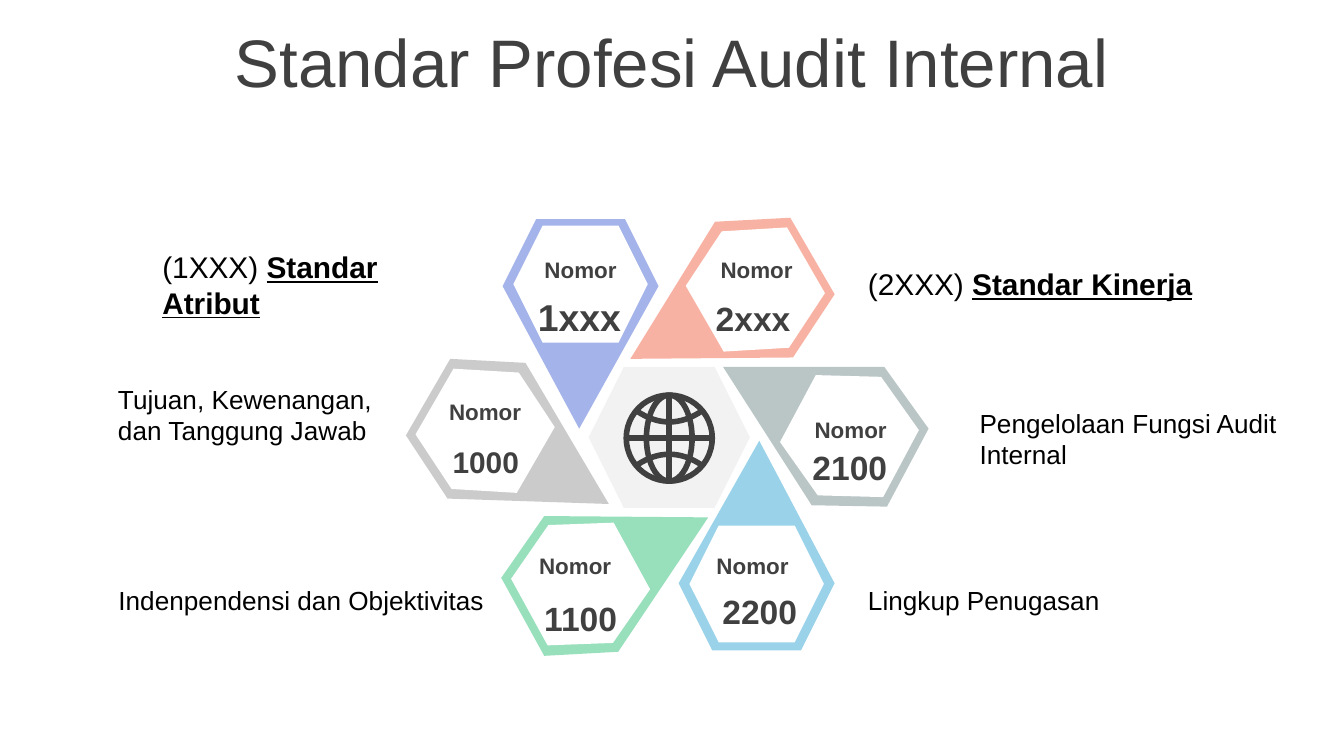
from lxml.etree import SubElement
from pptx import Presentation
from pptx.dml.color import RGBColor
from pptx.enum.shapes import MSO_CONNECTOR, MSO_SHAPE
from pptx.enum.text import MSO_ANCHOR, PP_ALIGN
from pptx.oxml.ns import qn
from pptx.util import Inches, Pt

FONT = "Arial"
DARK = RGBColor(0x40, 0x40, 0x40)
BLACK = RGBColor(0x00, 0x00, 0x00)
WHITE = RGBColor(0xFF, 0xFF, 0xFF)
PALE = RGBColor(0xF2, 0xF2, 0xF2)
BLUE = RGBColor(0xA4, 0xB4, 0xEA)
CORAL = RGBColor(0xF8, 0xB2, 0xA3)
SAGE = RGBColor(0xBA, 0xC5, 0xC5)
SKY = RGBColor(0x9A, 0xD3, 0xE9)
MINT = RGBColor(0x98, 0xDF, 0xBB)
GREY = RGBColor(0xCB, 0xCB, 0xCB)

# Petal outline, colour, inner hexagon (left, top, rotation),
# "Nomor" position, number, number box, number size
PETALS = [
    ([(3.99, 1.63), (4.65, 1.63), (4.9, 2.13), (4.31, 3.19), (3.74, 2.13)],
     BLUE, (3.82, 1.68, 0), (3.79, 1.86), "1xxx", (3.89, 2.14, 0.83, 0.44), 20),
    ([(5.88, 1.62), (6.21, 2.19), (5.9, 2.66), (4.69, 2.67), (5.32, 1.65)],
     CORAL, (5.12, 1.72, 60), (5.1, 1.86), "2xxx", (5.22, 2.17, 0.76, 0.4), 18),
    ([(6.91, 3.19), (6.6, 3.77), (6.04, 3.76), (5.38, 2.73), (6.58, 2.73)],
     SAGE, (5.82, 2.81, 118.1), (5.8, 3.05), "2100", (5.94, 3.28, 0.76, 0.4), 18),
    ([(5.96, 4.84), (5.3, 4.84), (5.05, 4.34), (5.65, 3.28), (6.21, 4.34)],
     SKY, (5.13, 3.91, 180), (5.07, 4.06), "2200", (5.27, 4.35, 0.76, 0.4), 18),
    ([(4.05, 4.88), (3.73, 4.3), (4.05, 3.84), (5.27, 3.85), (4.6, 4.85)],
     MINT, (3.82, 3.91, 241.3), (3.75, 4.06), "1100", (3.94, 4.4, 0.75, 0.4), 18),
    ([(3.02, 3.24), (3.35, 2.67), (3.91, 2.7), (4.53, 3.75), (3.33, 3.71)],
     GREY, (3.11, 2.77, 300), (3.08, 2.91), "1000", (3.26, 3.25, 0.7, 0.37), 16),
]

# Code, underlined name, box
HEADINGS = [
    ("(1XXX) ", "Standar Atribut", (1.11, 1.8, 2.53, 0.64)),
    ("(2XXX) ", "Standar Kinerja", (6.36, 1.93, 2.66, 0.37)),
]

DESCRIPTIONS = [
    ("Tujuan, Kewenangan, dan Tanggung Jawab", (0.78, 2.8, 2.2, 0.57), PP_ALIGN.LEFT),
    ("Indenpendensi dan Objektivitas", (0.59, 4.3, 3.11, 0.34), PP_ALIGN.RIGHT),
    ("Pengelolaan Fungsi Audit Internal", (7.19, 2.98, 2.46, 0.57), PP_ALIGN.LEFT),
    ("Lingkup Penugasan", (6.36, 4.3, 2.11, 0.34), PP_ALIGN.LEFT),
]


def add_text(slide, text, box, size, color, align=PP_ALIGN.LEFT, bold=None, wrap=True):
    frame = slide.shapes.add_textbox(*map(Inches, box)).text_frame
    frame.word_wrap = wrap
    paragraph = frame.paragraphs[0]
    paragraph.add_run().text = text
    paragraph.alignment = align
    font = paragraph.font
    font.name, font.size, font.bold = FONT, Pt(size), bold
    font.color.rgb = color
    return frame


def add_heading(slide, code, name, box):
    paragraph = add_text(slide, code, box, 16, BLACK).paragraphs[0]
    run = paragraph.add_run()
    run.text = name
    run.font.bold = run.font.underline = True


def fill_plain(shape, color):
    shape.shadow.inherit = False
    shape.fill.solid()
    shape.fill.fore_color.rgb = color
    shape.line.fill.background()


def outline_only(shape):
    shape.shadow.inherit = False
    shape.fill.background()
    shape.line.color.rgb = DARK
    shape.line.width = Pt(3)


def add_hexagon(slide, box, color, rotation=0):
    hexagon = slide.shapes.add_shape(MSO_SHAPE.HEXAGON, *map(Inches, box))
    hexagon.rotation = rotation
    fill_plain(hexagon, color)


def add_outline(slide, points, close):
    start, *rest = [(Inches(x), Inches(y)) for x, y in points]
    builder = slide.shapes.build_freeform(*start)
    builder.add_line_segments(rest, close=close)
    return builder.convert_to_shape()


def add_petal(slide, points, color, hexagon, label, number, number_box, size):
    left, top, rotation = hexagon
    fill_plain(add_outline(slide, points, True), color)
    add_hexagon(slide, (left, top, 1, 0.87), WHITE, rotation)
    add_text(slide, number, number_box, size, DARK, PP_ALIGN.RIGHT, True, wrap=False)
    add_text(slide, "Nomor", (*label, 1.06, 0.3), 12, DARK, PP_ALIGN.CENTER, True)


def add_globe(slide, x, y, radius):
    # Rim and meridian
    for half_width in (radius, 0.17):
        outline_only(slide.shapes.add_shape(
            MSO_SHAPE.OVAL, Inches(x - half_width), Inches(y - radius),
            Inches(2 * half_width), Inches(2 * radius)))
    # Equator and axis
    for dx, dy in ((radius, 0), (0, radius)):
        line = slide.shapes.add_connector(
            MSO_CONNECTOR.STRAIGHT, Inches(x - dx), Inches(y - dy),
            Inches(x + dx), Inches(y + dy))
        line.line.color.rgb = DARK
        line.line.width = Pt(3)
        SubElement(line._element.spPr, qn("a:effectLst"))
    # Curved parallels above and below the equator
    steps = [i / 8 for i in range(-8, 9)]
    for side in (-1, 1):
        curve = [(x + 0.24 * t, y + side * (0.12 + 0.08 * t * t)) for t in steps]
        outline_only(add_outline(slide, curve, False))


def main():
    # Widescreen 16:9 page
    prs = Presentation()
    prs.slide_width = Inches(10)
    prs.slide_height = prs.slide_width * 9 // 16
    slide = prs.slides.add_slide(prs.slide_layouts[6])

    # Title
    title = add_text(slide, "Standar Profesi Audit Internal", (0, 0.14, 10, 0.63),
                     36, DARK, PP_ALIGN.CENTER)
    title.vertical_anchor = MSO_ANCHOR.MIDDLE

    # Ring of standards around the globe
    for petal in PETALS:
        add_petal(slide, *petal)
    add_hexagon(slide, (4.38, 2.73, 1.2, 1.05), PALE)
    add_globe(slide, 4.98, 3.26, 0.32)

    # Captions on both sides
    for heading in HEADINGS:
        add_heading(slide, *heading)
    for text, box, align in DESCRIPTIONS:
        add_text(slide, text, box, 14, BLACK, align)

    prs.save("out.pptx")


if __name__ == "__main__":
    main()
